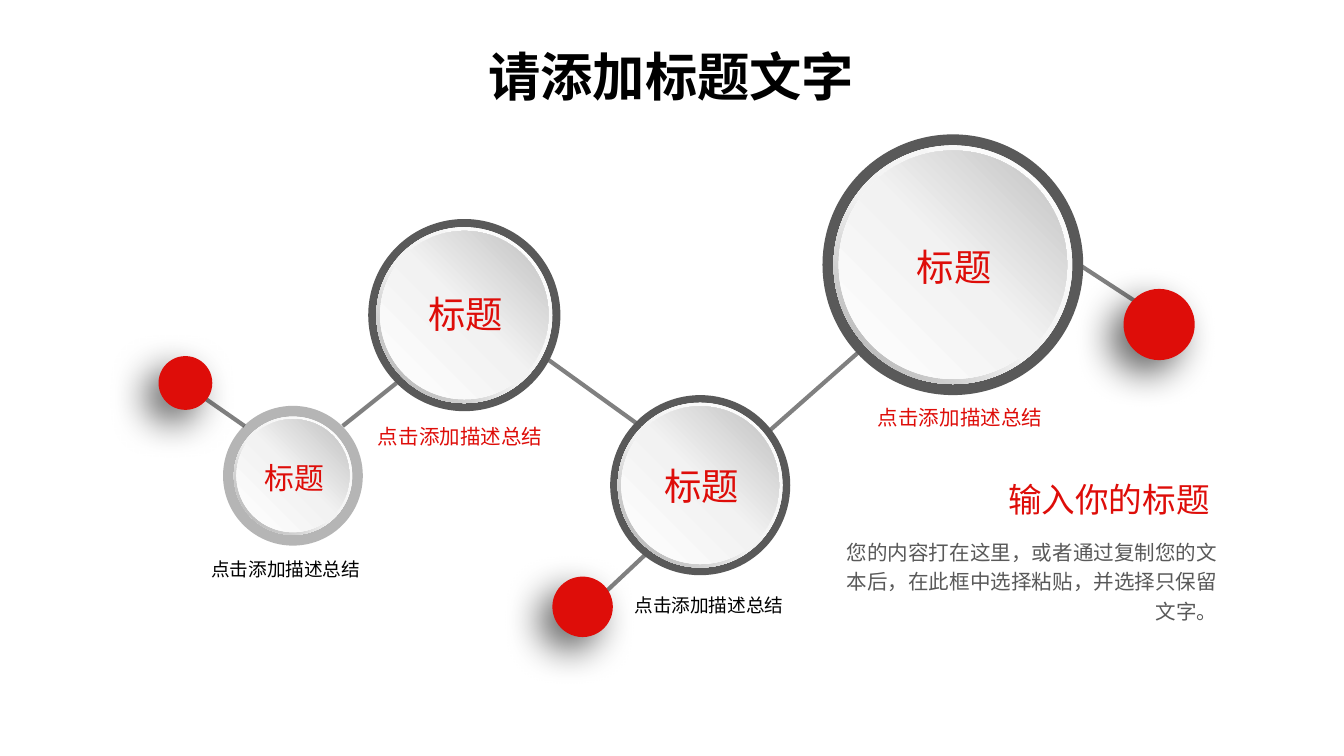
from lxml import etree
from pptx import Presentation
from pptx.dml.color import RGBColor
from pptx.enum.lang import MSO_LANGUAGE_ID
from pptx.enum.shapes import MSO_CONNECTOR, MSO_SHAPE
from pptx.enum.text import MSO_ANCHOR, MSO_AUTO_SIZE, PP_ALIGN
from pptx.oxml import parse_xml
from pptx.oxml.ns import nsdecls, qn
from pptx.util import Inches, Pt

OVAL, DONUT = MSO_SHAPE.OVAL, MSO_SHAPE.DONUT
LINE = MSO_CONNECTOR.STRAIGHT
MID, RIGHT = PP_ALIGN.CENTER, PP_ALIGN.RIGHT
TOP, CENTER = MSO_ANCHOR.TOP, MSO_ANCHOR.MIDDLE
GROW, FIXED = MSO_AUTO_SIZE.SHAPE_TO_FIT_TEXT, MSO_AUTO_SIZE.NONE
CHINESE = MSO_LANGUAGE_ID.SIMPLIFIED_CHINESE

WIDTH = 10
HEIGHT = WIDTH * 9 / 16
HEAD, BODY = "Noto Sans CJK SC", "Arial"
COLOR = dict(red="DE0D09", black="000000", dark="595959", line="808080", ink="0D0D0D")

LINKS = [
    ((2.55, 3.17), (2.95, 2.85)),
    ((4.07, 2.67), (4.82, 3.21)),
    ((5.72, 3.21), (6.4, 2.61)),
    ((1.49, 2.94), (1.82, 3.17)),
    ((4.49, 4.42), (4.82, 4.11)),
    ((8, 1.95), (8.46, 2.25)),
]
# left, top, diameter, rim color, rim opacity, donut share, disc share, size, label top
DIALS = [
    (2.74, 1.63, 1.43, "dark", 100, 0.915, 0.876, 20, 2.12),
    (1.66, 3.02, 1.04, "ink", 30, 0.846, 0.808, 16, 3.37),
    (4.54, 2.94, 1.34, "dark", 100, 0.915, 0.876, 20, 3.4),
    (6.12, 1, 1.94, "dark", 100, 0.915, 0.876, 20, 1.77),
]
LABEL = "标题"
# left, top, diameter
DOTS = [(1.18, 2.65, 0.4), (4.11, 4.29, 0.45), (8.36, 2.15, 0.53)]
# left, top, size, color
CAPTION = "点击添加描述总结"
CAPTIONS = [
    (1.38, 4.08, 10, "black"),
    (2.68, 3.1, 11, "red"),
    (4.53, 4.35, 10, "black"),
    (6.4, 2.96, 11, "red"),
]
TITLE = "请添加标题文字"
LEAD = "输入你的标题"
NOTE = "您的内容打在这里，或者通过复制您的文本后，在此框中选择粘贴，并选择只保留文字。"

RING = (135, [(0, "FFFFFF"), (55, "F2F2F2"), (100, "A6A6A6")])
DISC = (315, [(0, "FFFFFF"), (51, "F2F2F2"), (100, "BFBFBF")])

deck = Presentation()
deck.slide_width, deck.slide_height = Inches(WIDTH), Inches(HEIGHT)
slide = deck.slides.add_slide(deck.slide_layouts[6])


def rgb(name):
    return RGBColor.from_string(COLOR[name])


def add_text(home, box, text, size, color, align=MID, face=BODY, bold=False,
             pad=(0.1, 0.05), space=None, anchor=TOP, fit=GROW, wrap=True):
    frame = home.add_textbox(*map(Inches, box)).text_frame
    frame.word_wrap, frame.auto_size = wrap, fit
    frame.vertical_anchor = anchor
    frame.margin_left = frame.margin_right = Inches(pad[0])
    frame.margin_top = frame.margin_bottom = Inches(pad[1])
    para = frame.paragraphs[0]
    para.alignment, para.line_spacing = align, space
    run = para.add_run()
    run.text = text
    font = run.font
    font.name, font.size, font.bold = face, Pt(size), bold
    font.color.rgb, font.language_id = rgb(color), CHINESE
    east = etree.SubElement(font._element, qn("a:ea"))
    east.set("typeface", face)


def add_round(home, kind, x, y, size):
    """Add a lineless round shape centered on x, y."""
    shape = home.add_shape(kind, *map(Inches, (x - size / 2, y - size / 2, size, size)))
    shape.shadow.inherit = False
    shape.line.fill.background()
    return shape


def paint(shape, color, alpha=100):
    shape.fill.solid()
    shape.fill.fore_color.rgb = rgb(color)
    if alpha < 100:
        tone = shape._element.spPr.find(qn("a:solidFill"))[0]
        etree.SubElement(tone, qn("a:alpha")).set("val", str(alpha * 1000))


def blend(shape, angle, stops):
    """Fill with a gradient; the angle runs clockwise."""
    marks = "".join(f'<a:gs pos="{at * 1000}"><a:srgbClr val="{tone}"/></a:gs>'
                    for at, tone in stops)
    shape._element.spPr.find(qn("a:prstGeom")).addnext(parse_xml(
        f'<a:gradFill {nsdecls("a")} rotWithShape="1"><a:gsLst>{marks}</a:gsLst>'
        f'<a:lin ang="{angle * 60000}" scaled="0"/></a:gradFill>'))


def add_link(start, end):
    link = slide.shapes.add_connector(LINE, *map(Inches, start + end))
    link.line.color.rgb, link.line.width = rgb("line"), Pt(2.25)
    etree.SubElement(link._element.spPr, qn("a:effectLst"))


def add_dial(left, top, size, rim, alpha, ring, disc, points, level):
    home = slide.shapes.add_group_shape().shapes
    x, y = left + size / 2, top + size / 2
    paint(add_round(home, OVAL, x, y, size), rim, alpha)
    band = add_round(home, DONUT, x, y, size * ring)
    band.adjustments[0] = 0.049
    blend(band, *RING)
    blend(add_round(home, OVAL, x, y, size * disc), *DISC)
    wide, high = (points * 2 + 14.4) / 72, points * 0.022
    add_text(home, (x + 0.01 - wide / 2, level, wide, high),
             LABEL, points, "red", wrap=False)


def add_dot(left, top, size):
    dot = add_round(slide.shapes, OVAL, left + size / 2, top + size / 2, size)
    paint(dot, "red")
    dot._element.spPr.find(qn("a:effectLst")).append(parse_xml(
        f'<a:outerShdw {nsdecls("a")} blurRad="{Pt(20)}" dist="{Pt(10)}" '
        f'dir="{135 * 60000}" algn="tr" rotWithShape="0">'
        f'<a:srgbClr val="{COLOR["black"]}"><a:alpha val="60000"/></a:srgbClr>'
        '</a:outerShdw>'))


for link in LINKS:
    add_link(*link)
for x, y, size, color in CAPTIONS:
    add_text(slide.shapes, (x, y, 1.49, 0.27), CAPTION, size, color,
             pad=(0.09, 0.04), space=Pt(14.1))
add_text(slide.shapes, (6.55, 3.55, 2.54, 0.37), LEAD, 18, "red", RIGHT,
         pad=(0.09, 0.05), space=0.9)
add_text(slide.shapes, (6.13, 3.94, 3, 0.73), NOTE, 11, "dark", RIGHT,
         pad=(0.07, 0.04), space=1.2)
for dial in DIALS:
    add_dial(*dial)
for dot in DOTS:
    add_dot(*dot)
add_text(slide.shapes, (3.26, 0.13, 3.47, 0.87), TITLE, 28, "black", face=HEAD,
         bold=True, pad=(0.07, 0.04), anchor=CENTER, fit=FIXED)

deck.save("out.pptx")
